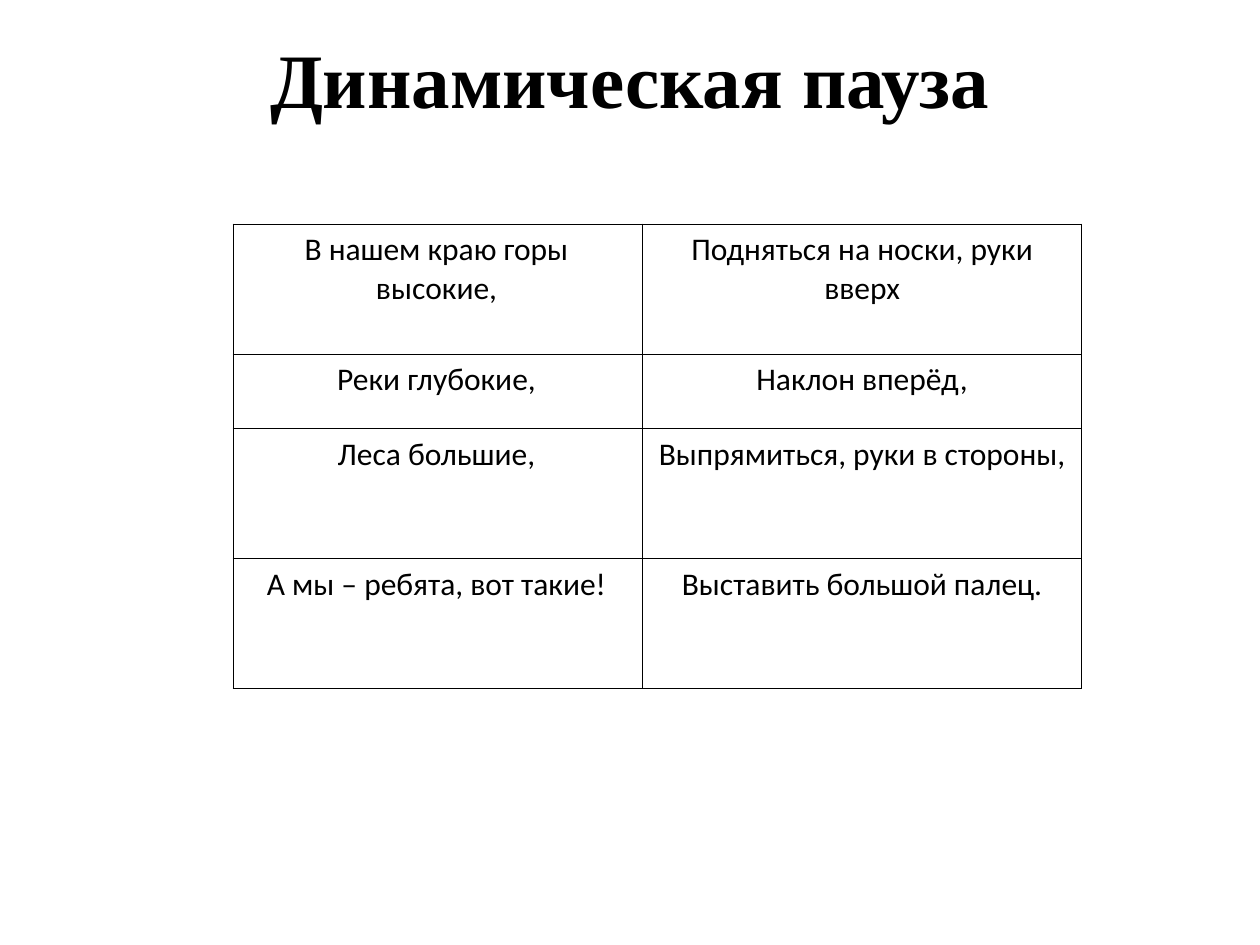
from lxml.etree import SubElement
from pptx import Presentation
from pptx.dml.color import RGBColor
from pptx.enum.text import MSO_ANCHOR, PP_ALIGN
from pptx.oxml.ns import qn
from pptx.util import Cm, Pt

BLACK = "000000"
TITLE_FONT = {"name": "Times New Roman", "size": Pt(44), "bold": True}
CELL_FONT = {"name": "Calibri", "size": Pt(18), "bold": False}
EXERCISES = [
    ("В нашем краю горы высокие,", "Подняться на носки, руки вверх"),
    ("Реки глубокие,", "Наклон вперёд,"),
    ("Леса большие,", "Выпрямиться, руки в стороны,"),
    ("А мы – ребята, вот такие!", "Выставить большой палец."),
]


def color(hex_value):
    return RGBColor.from_string(hex_value)


def set_attributes(target, values):
    for name, value in values.items():
        setattr(target, name, value)


def write_centered(frame, wording, font_values):
    paragraph = frame.paragraphs[0]
    paragraph.alignment = PP_ALIGN.CENTER
    run = paragraph.add_run()
    run.text = wording
    set_attributes(run.font, font_values)
    run.font.color.rgb = color(BLACK)


def add_borders(cell, hex_value, width):
    properties = cell._tc.get_or_add_tcPr()
    for position, side in enumerate(("lnL", "lnR", "lnT", "lnB")):
        line = SubElement(properties, qn(f"a:{side}"), w=str(width))
        fill = SubElement(line, qn("a:solidFill"))
        SubElement(fill, qn("a:srgbClr"), val=hex_value)
        # Borders come before the cell fill
        properties.insert(position, line)


def add_title(slide, left, top, width, height):
    heading = slide.shapes.add_textbox(left, top, width, height).text_frame
    # The bottom margin keeps the single line in the upper part of the box
    set_attributes(heading, {
        "word_wrap": True,
        "vertical_anchor": MSO_ANCHOR.MIDDLE,
        "margin_bottom": Cm(2.43),
    })
    write_centered(heading, "Динамическая пауза", TITLE_FONT)


def add_exercises(slide, left, top, column_widths, row_heights):
    table = slide.shapes.add_table(
        len(row_heights), len(column_widths), left, top,
        sum(column_widths), sum(row_heights)).table
    set_attributes(table, {"first_row": False, "horz_banding": False})
    for column, width in zip(table.columns, column_widths):
        column.width = width
    for row, height, wordings in zip(table.rows, row_heights, EXERCISES):
        row.height = height
        for cell, wording, right in zip(row.cells, wordings, (0.25, 0.2)):
            set_attributes(cell, {
                "margin_left": Cm(0.2), "margin_right": Cm(right),
                "margin_top": Cm(0.13), "margin_bottom": Cm(0.13),
            })
            cell.fill.background()
            add_borders(cell, BLACK, Pt(0.75))
            write_centered(cell.text_frame, wording, CELL_FONT)


def main():
    deck = Presentation()
    set_attributes(deck, {"slide_width": Cm(25.4), "slide_height": Cm(19.05)})
    slide = deck.slides.add_slide(deck.slide_layouts[6])

    # Verse lines with their movements
    tall, short = Cm(2.62), Cm(1.5)
    add_exercises(slide, Cm(4.7), Cm(4.52), [Cm(8.25), Cm(8.86)],
                  [tall, short, tall, tall])

    # Title across the full width
    add_title(slide, 0, Cm(0.33), deck.slide_width, Cm(4.78))

    deck.save("out.pptx")


if __name__ == "__main__":
    main()
